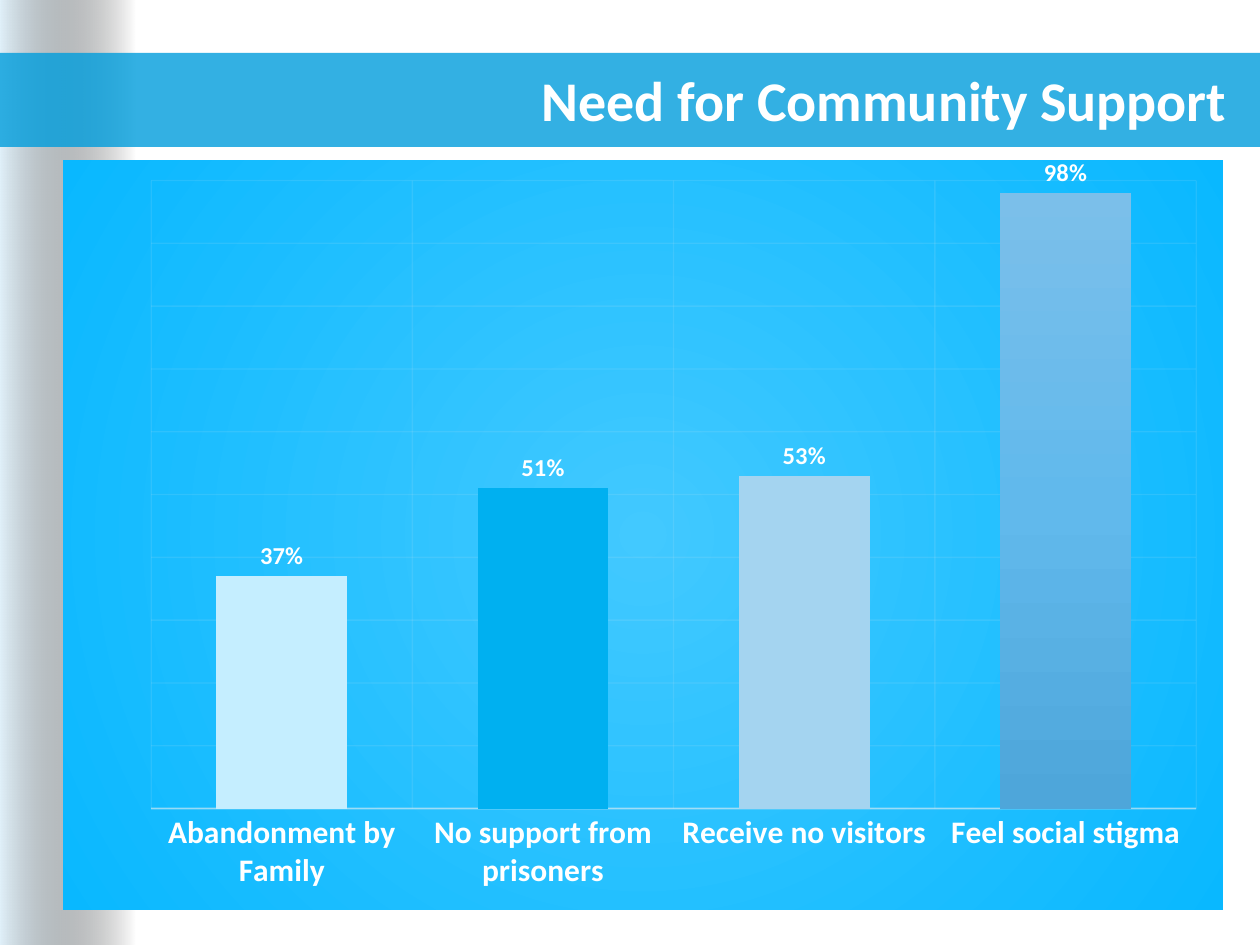
from lxml import etree
from pptx import Presentation
from pptx import util as u
from pptx.chart.data import CategoryChartData
from pptx.dml.color import RGBColor
from pptx.enum import chart as charts, shapes, text
from pptx.oxml import parse_xml
from pptx.oxml.ns import nsdecls, qn

SCALE = 914400 / 126  # EMU in one px
FONT = "Calibri"
COLORS = {
    "white": "FFFFFF", "band": "009DDC", "grid": "F2F2F2",
    "edge_start": "E1F1FA", "edge_end": "000000",
    "panel_center": "42C9FF", "panel_rim": "09B8FF",
    "bar_top": "7BBFEA", "bar_middle": "61B9EC", "bar_bottom": "4EA6DA",
    "family": "C5EEFF", "prisoners": "00B0F0", "visitors": "A4D4F0",
}
SUPPORT_NEEDS = {
    "Abandonment by Family": 0.37,
    "No support from prisoners": 0.51,
    "Receive no visitors": 0.53,
    "Feel social stigma": 0.98,
}
LINEAR_ACROSS = '<a:lin ang="0" scaled="0"/>'
LINEAR_DOWN = '<a:lin ang="5400000" scaled="0"/>'
FROM_CENTER = ('<a:path path="circle"><a:fillToRect l="50000" t="50000" '
               'r="50000" b="50000"/></a:path>')


def px(*lengths):
    return [u.Emu(round(length * SCALE)) for length in lengths]


def rgb(name):
    return RGBColor.from_string(COLORS[name])


def paint(fill, color):
    fill.solid()
    fill.fore_color.rgb = rgb(color)


def set_alpha(element, percent):
    for color in element.iter(qn("a:srgbClr")):
        etree.SubElement(color, qn("a:alpha"), val=str(percent * 1000))


def set_gradient(properties, stops, direction):
    """Replace the noFill of a spPr with (position, color, alpha) stops."""
    stop_xml = "".join(
        f'<a:gs pos="{position * 1000}"><a:srgbClr val="{COLORS[color]}">'
        f'<a:alpha val="{alpha * 1000}"/></a:srgbClr></a:gs>'
        for position, color, alpha in stops)
    gradient = parse_xml(f'<a:gradFill {nsdecls("a")} rotWithShape="1">'
                         f'<a:gsLst>{stop_xml}</a:gsLst>{direction}</a:gradFill>')
    properties.replace(properties.find(qn("a:noFill")), gradient)


def style_font(font, size, color="white", bold=True):
    font.name = FONT
    font.size = u.Pt(size)
    font.bold = bold
    font.color.rgb = rgb(color)


def write_text(shape, words, align=text.PP_ALIGN.LEFT,
               anchor=text.MSO_ANCHOR.MIDDLE, **font_format):
    frame = shape.text_frame
    frame.word_wrap = True
    frame.auto_size = text.MSO_AUTO_SIZE.NONE
    frame.vertical_anchor = anchor
    paragraph = frame.paragraphs[0]
    paragraph.text = words
    paragraph.alignment = align
    style_font(paragraph.runs[0].font, **font_format)


def add_rectangle(slide, left, top, width, height):
    shape = slide.shapes.add_shape(shapes.MSO_SHAPE.RECTANGLE,
                                   *px(left, top, width, height))
    shape.shadow.inherit = False
    shape.line.fill.background()
    return shape


def add_edge(slide):
    edge = add_rectangle(slide, 0, 0, 136, 945)
    edge.fill.background()
    set_gradient(edge.element.spPr,
                 [(0, "edge_start", 100), (100, "edge_end", 0)], LINEAR_ACROSS)


def add_band(slide, left, width):
    band = add_rectangle(slide, left, 53, width, 94)
    paint(band.fill, "band")
    set_alpha(band.element.spPr, 80)


def place_title(slide, words):
    title = slide.shapes.title
    title.left, title.top, title.width, title.height = px(319, 58, 921, 82)
    write_text(title, words, align=text.PP_ALIGN.RIGHT, size=32)
    title.element.getparent().append(title.element)  # in front of the bands


def style_axes(chart):
    category_axis, value_axis = chart.category_axis, chart.value_axis
    value_axis.minimum_scale, value_axis.maximum_scale = 0, 1
    value_axis.major_unit = 0.1
    value_axis.tick_labels.number_format = "0%"
    value_axis.tick_labels.number_format_is_linked = False
    value_axis.visible = False

    category_axis.major_tick_mark = charts.XL_TICK_MARK.NONE
    style_font(category_axis.tick_labels.font, 18)
    line = category_axis.format.line
    paint(line.fill, "grid")
    line.width = u.Pt(1)
    set_alpha(chart.element.find(".//" + qn("c:catAx")).find(qn("c:spPr")), 54)

    for axis in (category_axis, value_axis):
        axis.has_major_gridlines = True
        line = axis.major_gridlines.format.line
        paint(line.fill, "grid")
        line.width = u.Pt(0.75)
    for gridlines in chart.element.iter(qn("c:majorGridlines")):
        set_alpha(gridlines, 10)


def style_bars(chart):
    plot = chart.plots[0]
    plot.gap_width, plot.overlap = 100, -24
    plot.vary_by_categories = False
    series = plot.series[0]
    series.invert_if_negative = False
    series.format.fill.background()
    set_gradient(chart.element.find(".//" + qn("c:ser")).find(qn("c:spPr")),
                 [(0, "bar_top", 100), (50, "bar_middle", 100),
                  (100, "bar_bottom", 100)], LINEAR_DOWN)
    for index, color in enumerate(("family", "prisoners", "visitors")):
        paint(series.points[index].format.fill, color)

    labels = series.data_labels
    labels.show_value = True
    labels.position = charts.XL_LABEL_POSITION.OUTSIDE_END
    labels.number_format = "0%"
    labels.number_format_is_linked = False
    style_font(labels.font, 14)


def style_panel(chart):
    """Fill the chart area and fix the inner plot area as shares of it."""
    panel = parse_xml(f'<c:spPr {nsdecls("c", "a")}><a:noFill/>'
                      '<a:ln><a:noFill/></a:ln></c:spPr>')
    set_gradient(panel, [(0, "panel_center", 100), (100, "panel_rim", 100)],
                 FROM_CENTER)
    chart.element.find(qn("c:chart")).addnext(panel)

    plot_area = chart.element.find(".//" + qn("c:plotArea"))
    for layout in plot_area.findall(qn("c:layout")):
        plot_area.remove(layout)
    settings = {"layoutTarget": "inner", "xMode": "edge", "yMode": "edge",
                "x": 0.076, "y": 0.027, "w": 0.901, "h": 0.838}
    inner = "".join(f'<c:{name} val="{value}"/>' for name, value in settings.items())
    plot_area.insert(0, parse_xml(
        f'<c:layout {nsdecls("c")}><c:manualLayout>{inner}</c:manualLayout></c:layout>'))


def add_support_chart(slide):
    data = CategoryChartData(number_format="0%")
    data.categories = list(SUPPORT_NEEDS)
    data.add_series("Series 1", list(SUPPORT_NEEDS.values()))
    chart = slide.shapes.add_chart(charts.XL_CHART_TYPE.COLUMN_CLUSTERED,
                                   *px(63, 158, 1160, 752), data).chart
    chart.has_legend = False
    chart.has_title = False
    style_font(chart.font, 10, color="band", bold=False)
    style_axes(chart)
    style_bars(chart)
    style_panel(chart)


def main():
    presentation = Presentation()
    presentation.slide_width, presentation.slide_height = px(1260, 945)
    slide = presentation.slides.add_slide(presentation.slide_layouts[5])
    paint(slide.background.fill, "white")
    add_edge(slide)
    add_band(slide, 535, 725)
    add_band(slide, 0, 535)
    place_title(slide, "Need for Community Support")
    add_support_chart(slide)
    presentation.save("out.pptx")


if __name__ == "__main__":
    main()
